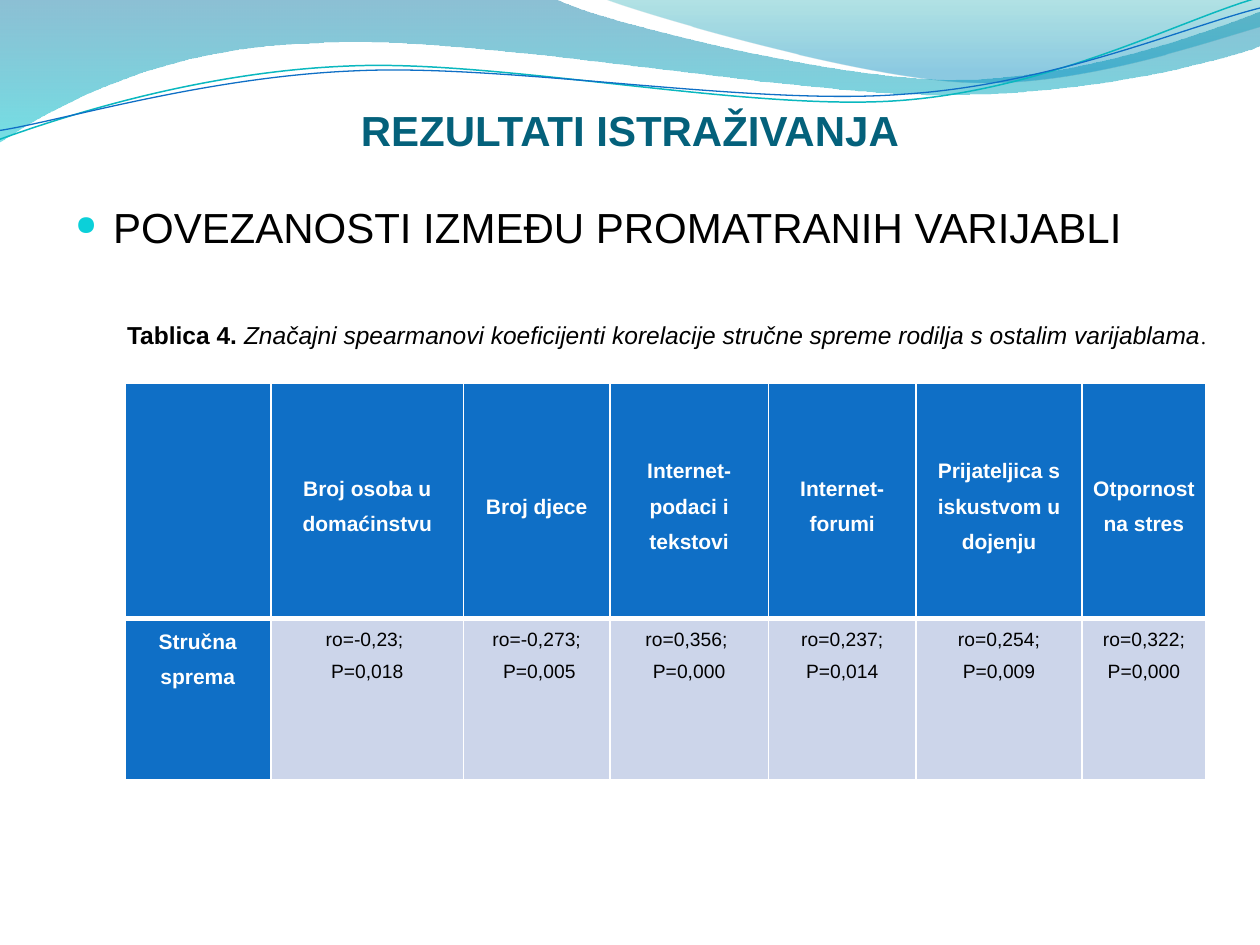
from lxml import etree
from pptx import Presentation
from pptx.dml.color import RGBColor
from pptx.enum.text import MSO_ANCHOR, PP_ALIGN
from pptx.oxml.ns import qn
from pptx.util import Inches, Pt

TOP, MIDDLE, BOTTOM = MSO_ANCHOR.TOP, MSO_ANCHOR.MIDDLE, MSO_ANCHOR.BOTTOM
LEFT, CENTER = PP_ALIGN.LEFT, PP_ALIGN.CENTER

HEADING = {"name": "Arial", "size": Pt(24), "bold": True, "color": "04617B"}
TOPIC = {"name": "Arial", "size": Pt(24), "color": "000000"}
LABEL = {"name": "Arial", "size": Pt(14), "bold": True, "color": "000000"}
CAPTION = {**LABEL, "bold": False, "italic": True}
FULL_STOP = {**CAPTION, "name": "Times New Roman", "size": Pt(12)}
HEADER = {"name": "Arial", "size": Pt(12), "bold": True, "color": "FFFFFF"}
VALUE = {"name": "Arial", "size": Pt(11), "bold": False, "color": "000000"}

BANDS = [
    ([(0, 0), (4.4, -0.01), (4.76, 0.17, 6.64, 0.63, 7.58, 0.63),
      (8.53, 0.63, 9.58, 0.26, 10, 0.09), (10.01, 0.36),
      (9.83, 0.44, 8.7, 0.76, 7.46, 0.75), (6.22, 0.75, 3.82, 0.28, 2.57, 0.34),
      (1.29, 0.36, 0.46, 0.83, -0.01, 1.13), (0, 0)],
     [(0, "0074A1", 45), (1, "00C6CF", 55)]),
    ([(4.79, -0.01), (5.09, 0.11, 6.82, 0.62, 7.69, 0.65),
      (8.56, 0.69, 9.61, 0.32, 10, 0.21), (10, 0), (4.79, -0.01)],
     [(0, "00A1A9", 30), (0.8, "008BBF", 45)]),
]
STRAND_ROTATION = 357.3
STRANDS = [
    ([(-0.02, 0.87), (0.47, 0.72, 1.58, 0.41, 2.77, 0.42),
      (3.96, 0.42, 5.91, 0.93, 7.12, 0.9), (8.32, 0.87, 9.4, 0.36, 10, 0.22)],
     "0AB8BF", 0.85),
    ([(-0.02, 0.8), (0.46, 0.75, 1.64, 0.45, 2.83, 0.46),
      (4.04, 0.46, 5.96, 0.89, 7.16, 0.85), (8.35, 0.83, 9.42, 0.42, 10.02, 0.3)],
     "0F6FC6", 0.75),
]

COLUMN_WIDTHS = [1.16, 1.53, 1.16, 1.26, 1.17, 1.32, 0.98]
ROW_HEIGHTS = [1.87, 1.28]
CORRELATIONS = [
    ["", "Broj osoba u domaćinstvu", "Broj djece", "Internet-podaci i tekstovi",
     "Internet- forumi", "Prijateljica s iskustvom u dojenju", "Otpornost na stres"],
    ["Stručna sprema", "ro=-0,23; \nP=0,018", "ro=-0,273;\n P=0,005",
     "ro=0,356; \nP=0,000", "ro=0,237; P=0,014", "ro=0,254; P=0,009",
     "ro=0,322; P=0,000"],
]


def rgb(value):
    """Turn a hex string into a colour."""
    return RGBColor.from_string(value)


def set_values(target, values):
    """Set each named attribute of the target."""
    for key, value in values.items():
        setattr(target, key, value)


def style_font(font, style):
    """Apply a text style to a font."""
    set_values(font, {key: value for key, value in style.items() if key != "color"})
    font.color.rgb = rgb(style["color"])


def add_curve(slide, box, segments, closed):
    """Draw lines and cubic curves relative to the box."""
    points = [(Inches(box[0] + segment[i]), Inches(box[1] + segment[i + 1]))
              for segment in segments for i in range(0, len(segment), 2)]
    builder = slide.shapes.build_freeform(*points[0])
    builder.add_line_segments(points[1:], close=closed)
    curve = builder.convert_to_shape()
    curve.shadow.inherit = False
    steps = iter(list(curve._element.iter(qn("a:lnTo"))))
    for segment in segments[1:]:
        step = next(steps)
        if len(segment) == 6:
            step.addprevious(bezier := etree.Element(qn("a:cubicBezTo")))
            for control in (step, next(steps), next(steps)):
                bezier.append(control[0])
                control.getparent().remove(control)
    return curve


def add_waves(slide, box):
    """Draw the translucent bands and thin strands of the header."""
    for segments, stops in BANDS:
        band = add_curve(slide, box, segments, True)
        band.line.fill.background()
        band.fill.gradient()
        band.fill.gradient_angle = 270
        for stop, (position, color, opacity) in zip(band.fill.gradient_stops, stops):
            stop.position = position
            stop.color.rgb = rgb(color)
            for color_node in stop.color._xFill.iter(qn("a:srgbClr")):
                etree.SubElement(color_node, qn("a:alpha"), val=str(opacity * 1000))
    for segments, color, width in STRANDS:
        strand = add_curve(slide, box, segments, False)
        strand.rotation = STRAND_ROTATION
        strand.fill.background()
        strand.line.color.rgb = rgb(color)
        strand.line.width = Pt(width)


def add_text(slide, box, runs, align=LEFT, **frame_values):
    """Place one paragraph of styled runs in the box."""
    frame = slide.shapes.add_textbox(*map(Inches, box)).text_frame
    set_values(frame, {"word_wrap": True, **frame_values})
    paragraph = frame.paragraphs[0]
    paragraph.alignment = align
    for text, style in runs:
        run = paragraph.add_run()
        run.text = text
        style_font(run.font, style)
    return paragraph


def add_title(slide, box):
    """Place the centred slide title."""
    add_text(slide, box, [("REZULTATI ISTRAŽIVANJA", HEADING)], CENTER,
             vertical_anchor=BOTTOM, margin_left=0, margin_right=0, margin_bottom=0)


def add_topic(slide, box):
    """Place the bulleted topic line."""
    topic = add_text(slide, box, [("POVEZANOSTI IZMEĐU PROMATRANIH VARIJABLI", TOPIC)],
                     vertical_anchor=TOP)
    topic.space_before = Pt(1.4)
    properties = topic._p.get_or_add_pPr()
    properties.set("marL", str(Inches(0.3)))
    properties.set("indent", str(Inches(-0.3)))
    bullet_color = etree.SubElement(properties, qn("a:buClr"))
    etree.SubElement(bullet_color, qn("a:srgbClr"), val="0BD0D9")
    etree.SubElement(properties, qn("a:buSzPct"), val="65000")
    etree.SubElement(properties, qn("a:buChar"), char="●")


def add_caption(slide, box):
    """Place the table caption."""
    add_text(slide, box, [
        ("Tablica 4. ", LABEL),
        ("Značajni spearmanovi koeficijenti korelacije stručne spreme rodilja "
         "s ostalim varijablama", CAPTION),
        (".", FULL_STOP)], vertical_anchor=TOP)


def add_borders(cell, widths):
    """Give a cell white borders of the given widths in points."""
    properties = cell._tc.get_or_add_tcPr()
    for side, width in widths.items():
        border = etree.SubElement(properties, qn(f"a:ln{side}"), w=str(Pt(width)))
        fill = etree.SubElement(border, qn("a:solidFill"))
        etree.SubElement(fill, qn("a:srgbClr"), val="FFFFFF")


def add_correlations(slide, box):
    """Fill the table of correlation coefficients."""
    table = slide.shapes.add_table(len(ROW_HEIGHTS), len(COLUMN_WIDTHS),
                                   *map(Inches, box)).table
    set_values(table, {"first_row": False, "horz_banding": False})
    for column, width in zip(table.columns, COLUMN_WIDTHS):
        column.width = Inches(width)
    for row, height in zip(table.rows, ROW_HEIGHTS):
        row.height = Inches(height)
    for r, texts in enumerate(CORRELATIONS):
        for c, text in enumerate(texts):
            cell = table.cell(r, c)
            is_header = r == 0 or c == 0
            add_borders(cell, {"L": 1, "R": 1, "T": 3 if r else 1, "B": 1 if r else 3})
            cell.fill.solid()
            cell.fill.fore_color.rgb = rgb("0F6FC6" if is_header else "CCD5EA")
            set_values(cell, {"margin_left": Inches(0.07), "margin_right": Inches(0.07),
                              "margin_top": 0, "margin_bottom": 0,
                              "vertical_anchor": TOP if r else MIDDLE})
            cell.text_frame.text = text
            for paragraph in cell.text_frame.paragraphs:
                set_values(paragraph, {"alignment": CENTER, "line_spacing": 1.5})
                for run in paragraph.runs:
                    style_font(run.font, HEADER if is_header else VALUE)


def main():
    """Build and save the slide."""
    deck = Presentation()
    set_values(deck, {"slide_width": Inches(10), "slide_height": Inches(7.5)})
    slide = deck.slides.add_slide(deck.slide_layouts[6])
    add_waves(slide, (0, 0))
    add_title(slide, (0.5, 0.6, 9, 0.63))
    add_topic(slide, (0.5, 1.55, 9, 5.37))
    add_correlations(slide, (0.99, 3.04, 8.58, 3.15))
    add_caption(slide, (0.91, 2.49, 9.12, 0.64))
    deck.save("out.pptx")


if __name__ == "__main__":
    main()
